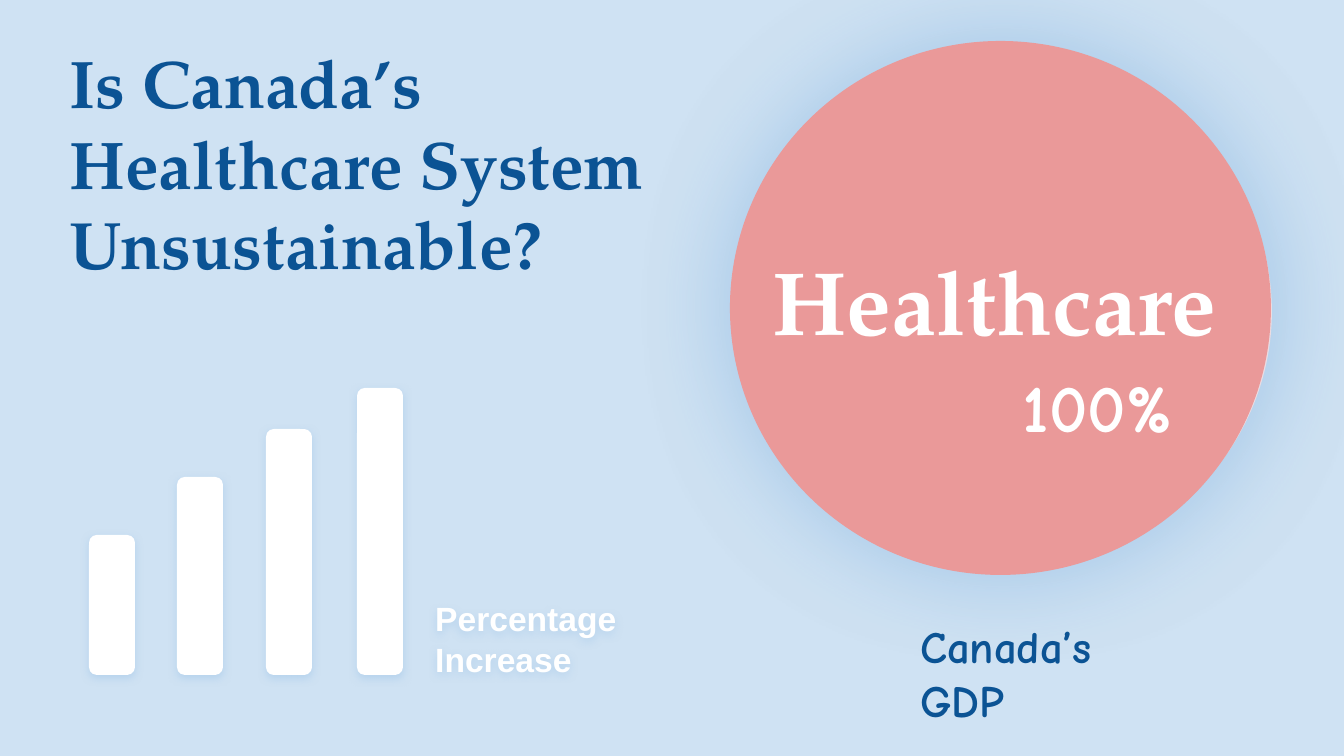
from lxml import etree
from pptx import Presentation
from pptx.dml import color
from pptx.enum import shapes, text
from pptx.oxml import ns
from pptx import util as u

EMU_PER_PX = 914400 / 134.4
NAVY, WHITE, SKY, PINK = "0B5394", "FFFFFF", "CFE2F3", "EA9999"
SERIF, COMIC, SANS = "TeX Gyre Pagella", "Comic Neue", "Arial"


def px(value):
    return u.Emu(round(value * EMU_PER_PX))


def rgb(value):
    return color.RGBColor.from_string(value)


class SlideBuilder:
    soft = ("9FC5E8", 50, 4.5, 1.5, 90)
    halo = ("6FA8DC", 28, 54, 0.8, 0)

    def __init__(self, page):
        self.page = page
        page.background.fill.solid()
        page.background.fill.fore_color.rgb = rgb(SKY)

    def shadow(self, box, style):
        box.shadow.inherit = False
        shade, alpha, blur, distance, angle = style
        effects = box._element.spPr.find(ns.qn("a:effectLst"))
        outer = etree.SubElement(
            effects, ns.qn("a:outerShdw"), blurRad=str(int(u.Pt(blur))),
            dist=str(int(u.Pt(distance))), dir=str(angle * 60000),
            algn="bl", rotWithShape="0")
        tint = etree.SubElement(outer, ns.qn("a:srgbClr"), val=shade)
        etree.SubElement(tint, ns.qn("a:alpha"), val=str(alpha * 1000))

    def shape(self, kind, bounds, fill, shadow=None, adjust=()):
        box = self.page.shapes.add_shape(kind, *map(px, bounds))
        box.fill.solid()
        box.fill.fore_color.rgb = rgb(fill)
        box.line.fill.background()
        for index, value in enumerate(adjust):
            box.adjustments[index] = value
        box.shadow.inherit = False
        if shadow:
            self.shadow(box, shadow)
        return box

    def set_text(self, box, words, size, font, shade, align=text.PP_ALIGN.LEFT):
        frame = box.text_frame
        frame.word_wrap = True
        frame.auto_size = text.MSO_AUTO_SIZE.NONE
        frame.vertical_anchor = text.MSO_ANCHOR.TOP
        frame.margin_left = frame.margin_right = u.Inches(0.1)
        frame.margin_top = frame.margin_bottom = u.Inches(0.1)
        para = frame.paragraphs[0]
        para.alignment = align
        span = para.add_run()
        span.text = words
        span.font.size = u.Pt(size)
        span.font.name = font
        span.font.bold = True
        span.font.color.rgb = rgb(shade)

    def title(self, bounds, *style):
        box = self.page.shapes.title
        box.left, box.top, box.width, box.height = map(px, bounds)
        self.set_text(box, *style)

    def label(self, bounds, *style):
        box = self.page.shapes.add_textbox(*map(px, bounds))
        self.set_text(box, *style)
        return box


def main():
    deck = Presentation()
    deck.slide_width, deck.slide_height = px(1344), px(756)
    builder = SlideBuilder(deck.slides.add_slide(deck.slide_layouts[5]))
    kinds = shapes.MSO_SHAPE

    builder.title((56, 28, 624, 198), "Is Canada’s Healthcare System Unsustainable?",
                  36, SERIF, NAVY)

    baseline = 675
    for left, height in ((89, 140), (177, 198), (266, 246), (357, 287)):
        builder.shape(kinds.ROUNDED_RECTANGLE, (left, baseline - height, 46, height),
                      WHITE, builder.soft, (0.17,))
    increase = builder.label((422, 585, 337, 69), "Percentage Increase", 18, SANS, WHITE)
    builder.shadow(increase, builder.soft)

    builder.shape(kinds.OVAL, (738, 48, 527, 520), WHITE, builder.halo)
    builder.label((907, 605, 269, 63), "Canada’s GDP", 24, COMIC, NAVY)
    builder.shape(kinds.PIE, (738, 55, 534, 513), "FFE4E4", adjust=(119.32, 35.47))
    builder.shape(kinds.OVAL, (730, 41, 541, 534), PINK, builder.halo)
    builder.label((759, 233, 496, 91), "Healthcare", 48, SERIF, WHITE)
    builder.label((1005, 352, 185, 51), "100%", 36, COMIC, WHITE, text.PP_ALIGN.CENTER)

    deck.save("out.pptx")


if __name__ == "__main__":
    main()
